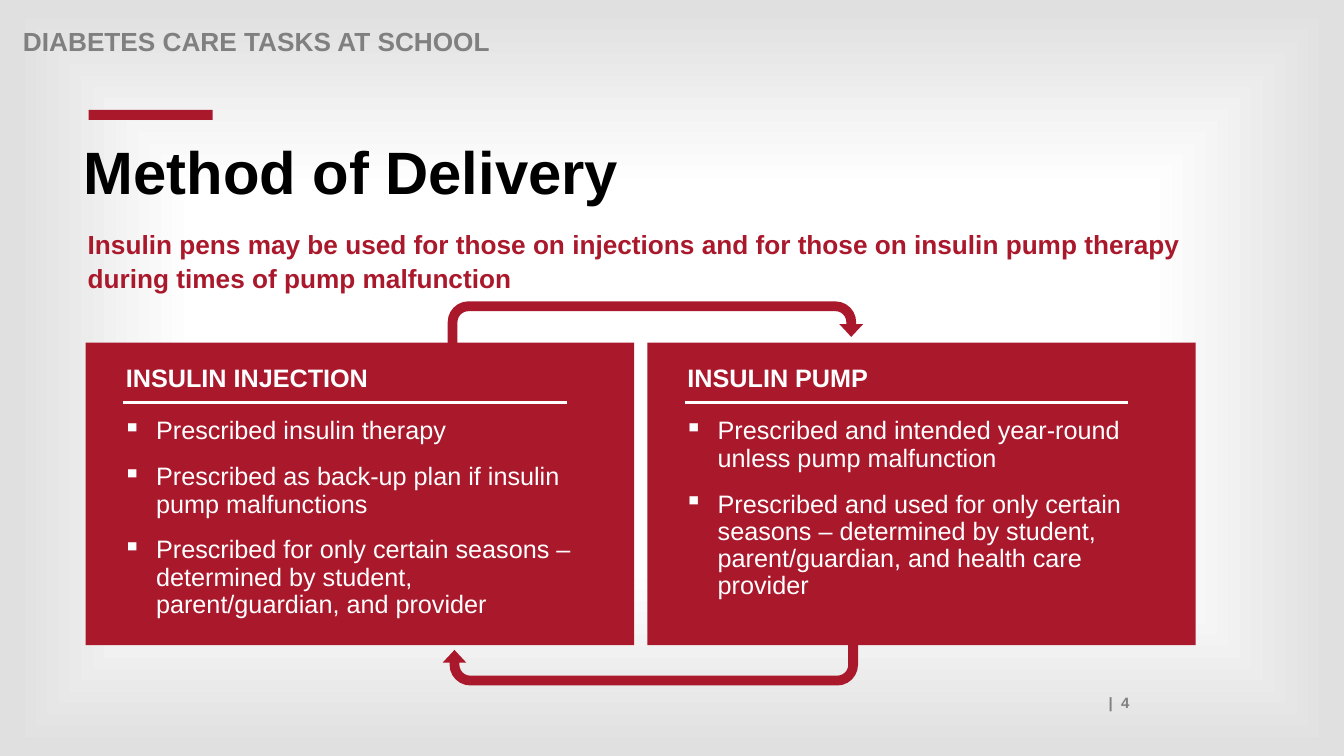
from dataclasses import dataclass
from pptx import Presentation
from pptx.dml.color import RGBColor as RGB
from pptx.enum.shapes import MSO_CONNECTOR as CONN, MSO_SHAPE as SHAPE
from pptx.enum.text import MSO_ANCHOR as ANCHOR, MSO_AUTO_SIZE as AUTO, PP_ALIGN as ALIGN
from pptx.oxml import parse_xml
from pptx.oxml.ns import nsdecls, qn
from pptx.util import Inches, Pt


@dataclass(frozen=True)
class Theme:
    font: str = "Arial"
    red: str = "AA182C"
    gray: str = "808080"
    black: str = "000000"
    white: str = "FFFFFF"
    edge: str = "E0E0E0"
    title: float = 42.7
    lead: float = 18.7
    body: float = 18
    footer: float = 10.7
    gap: float = 13.3


T = Theme()
CARDS = [
    (0.85, "INSULIN INJECTION", [
        "Prescribed insulin therapy",
        "Prescribed as back-up plan if insulin pump malfunctions",
        "Prescribed for only certain seasons – determined by student, parent/guardian, and provider",
    ]),
    (6.42, "INSULIN PUMP", [
        "Prescribed and intended year-round unless pump malfunction",
        "Prescribed and used for only certain seasons – determined by student, "
        "parent/guardian, and health care provider",
    ]),
]


def place(sp, box):
    sp.left, sp.top, sp.width, sp.height = map(Inches, box)


def set_background(s):
    s.background.fill.solid()
    bg = s.element.find(".//" + qn("p:bgPr"))
    stops = "".join(
        f'<a:gs pos="{pos}000"><a:srgbClr val="{color}"/></a:gs>'
        for pos, color in ((12, T.white), (50, T.white), (98, T.edge)))
    bg.replace(bg[0], parse_xml(
        f'<a:gradFill {nsdecls("a")} rotWithShape="1"><a:gsLst>{stops}</a:gsLst>'
        '<a:path path="shape"><a:fillToRect l="50000" t="50000" r="50000" b="50000"/>'
        '</a:path></a:gradFill>'))


def set_bullet(p, char=None):
    pPr = p._p.get_or_add_pPr()
    indent = Inches(0.33) if char else 0
    pPr.set("marL", str(indent))
    pPr.set("indent", str(-indent))
    bullet = f'<a:buChar {nsdecls("a")} char="{char}"/>' if char else f'<a:buNone {nsdecls("a")}/>'
    pPr.append(parse_xml(bullet))


def write(sp, lines, size, color, bold=True, align=ALIGN.LEFT, spacing=0.9, bullet=None):
    tf = sp.text_frame
    tf.word_wrap = True
    tf.auto_size = AUTO.NONE
    tf.vertical_anchor = ANCHOR.TOP
    tf.text = "\n".join(lines)
    for p in tf.paragraphs:
        p.alignment = align
        p.line_spacing = spacing
        p.space_before = Pt(T.gap)
        set_bullet(p, bullet)
        for r in p.runs:
            r.font.name = T.font
            r.font.size = Pt(size)
            r.font.bold = bold
            r.font.color.rgb = RGB.from_string(color)


def add_text(s, box, lines, size, color, **style):
    sp = s.shapes.add_textbox(*map(Inches, box))
    write(sp, lines, size, color, **style)


def add_block(s, kind, box):
    sp = s.shapes.add_shape(kind, *map(Inches, box))
    sp.shadow.inherit = False
    sp.fill.solid()
    sp.fill.fore_color.rgb = RGB.from_string(T.red)
    sp.line.fill.background()
    return sp


def add_rule(s, left, top, width):
    line = s.shapes.add_connector(
        CONN.STRAIGHT, Inches(left), Inches(top), Inches(left + width), Inches(top))
    line.line.color.rgb = RGB.from_string(T.white)
    line.line.width = Pt(2)
    line._element.spPr.append(parse_xml(f'<a:effectLst {nsdecls("a")}/>'))


def add_card(s, left, heading, items):
    add_block(s, SHAPE.RECTANGLE, (left, 3.4, 5.44, 3))
    add_text(s, (left + 0.3, 3.58, 4.18, 0.41), [heading], T.body, T.white)
    add_text(s, (left + 0.27, 4.1, 4.76, 2.2), items, T.body, T.white, bold=False, bullet="▪")
    add_rule(s, left + 0.37, 3.99, 4.4)


def add_turn_arrow(s, left, top, rotation):
    sp = add_block(s, SHAPE.U_TURN_ARROW, (left, top, 4.12, 0.47))
    sp.rotation = rotation
    for i, value in enumerate((0.207, 0.25, 0.269, 0.438, 0.75)):
        sp.adjustments[i] = value


def fill_placeholders(s):
    title, body = s.shapes.title, s.placeholders[1]
    place(title, (0.73, 1.37, 11.03, 0.95))
    write(title, ["Method of Delivery"], T.title, T.black)
    place(body, (0.87, 2.25, 11.47, 0.63))
    tf = body.text_frame
    tf.margin_left = tf.margin_top = tf.margin_right = tf.margin_bottom = 0
    write(body, ["Insulin pens may be used for those on injections and for those on "
                 "insulin pump therapy during times of pump malfunction"],
          T.lead, T.red, spacing=1.06)


def main():
    prs = Presentation()
    prs.slide_width, prs.slide_height = Inches(13.33), Inches(7.5)
    s = prs.slides.add_slide(prs.slide_layouts[1])
    set_background(s)
    fill_placeholders(s)
    add_text(s, (1.21, 6.83, 10.09, 0.28), ["|  4"], T.footer, T.gray,
             align=ALIGN.RIGHT, spacing=1)
    add_text(s, (0.13, 0.24, 11, 0.28), ["DIABETES CARE TASKS AT SCHOOL"], T.lead, T.gray)
    add_block(s, SHAPE.RECTANGLE, (0.88, 1.09, 1.23, 0.1))
    for left, heading, items in CARDS:
        add_card(s, left, heading, items)
    add_turn_arrow(s, 4.44, 2.99, 0)
    add_turn_arrow(s, 4.39, 6.33, 180)
    prs.save("out.pptx")


if __name__ == "__main__":
    main()
